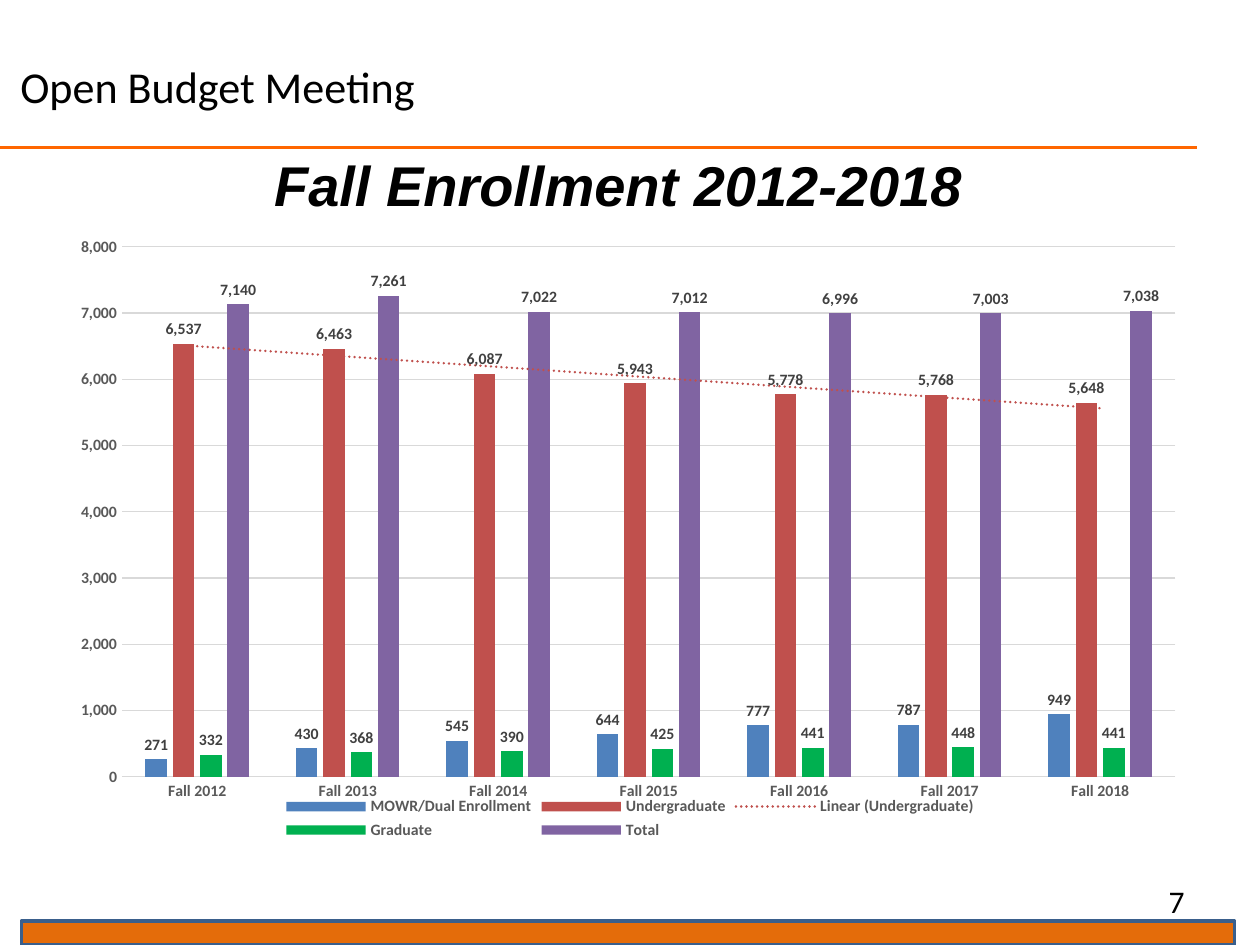
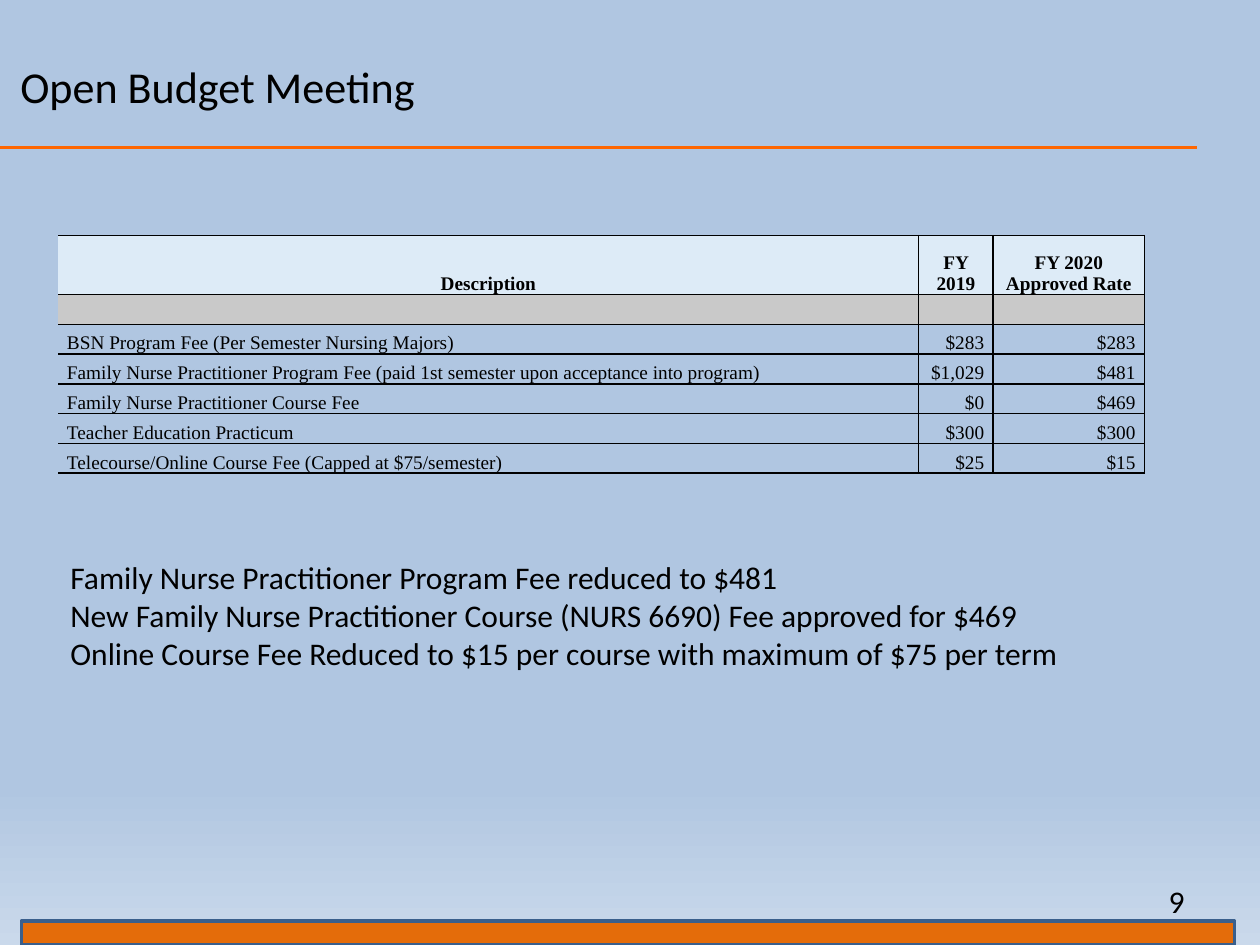
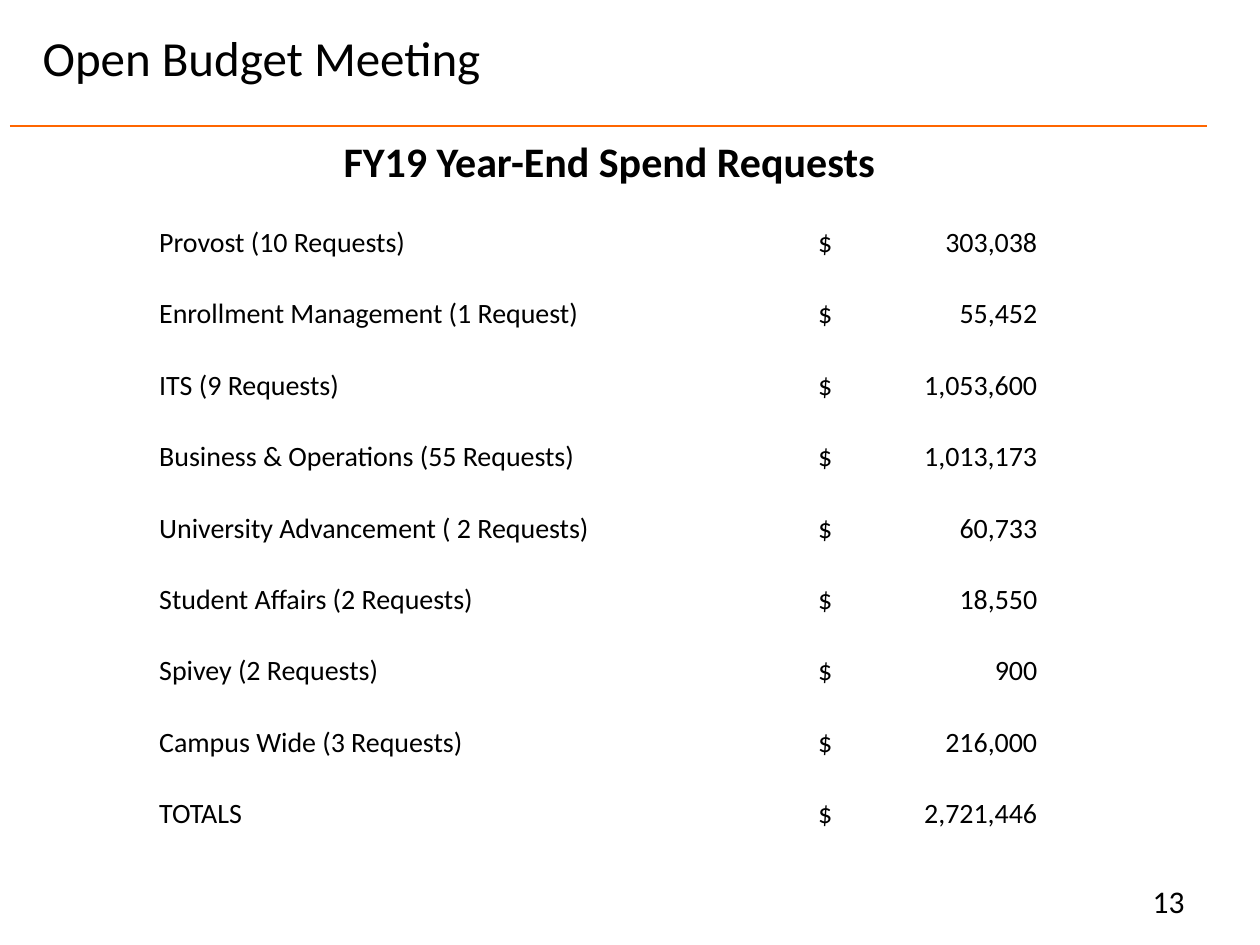
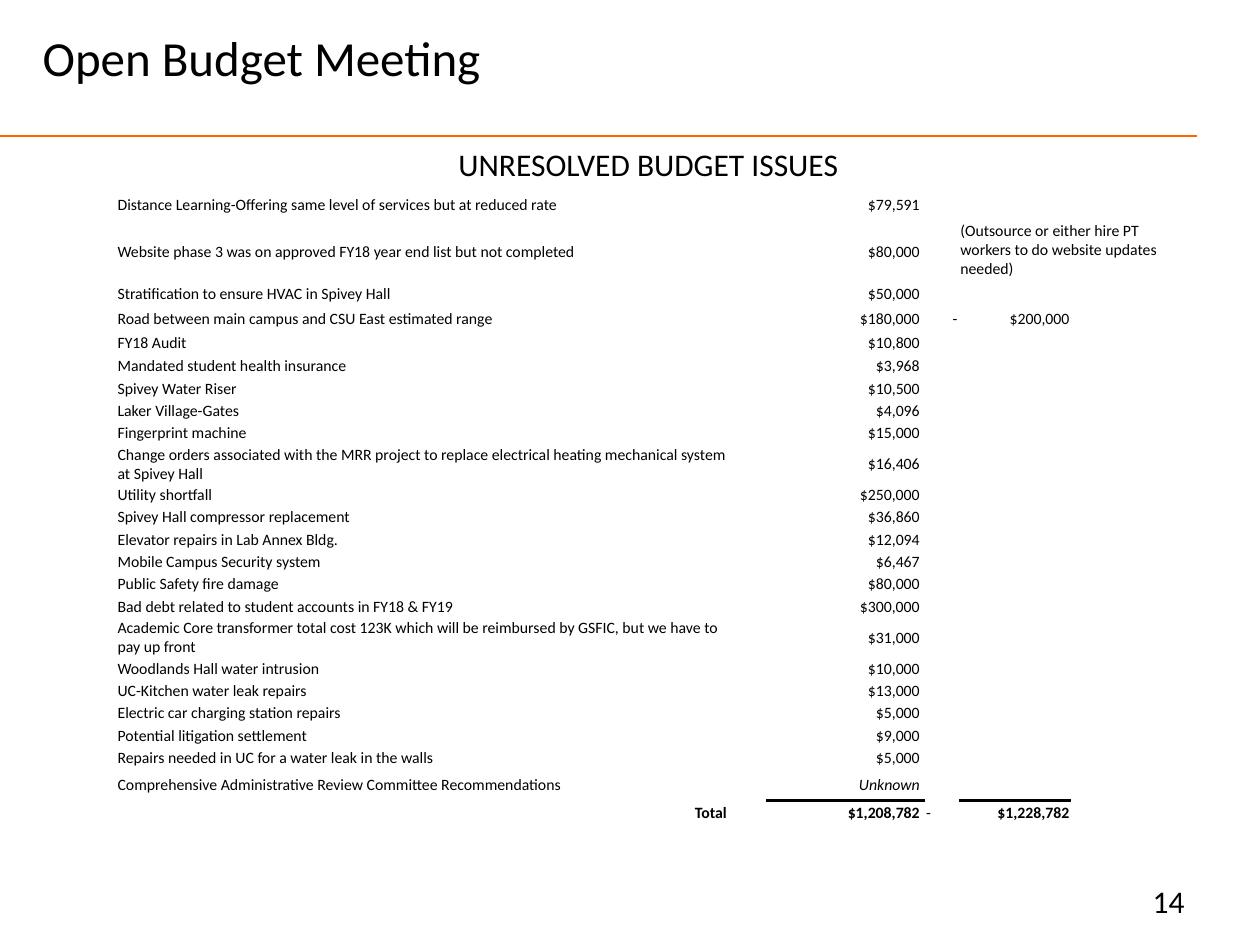
"""Build four slides of an open budget meeting: enrollment, fees, requests and issues."""
from lxml import etree
from pptx import Presentation
from pptx import util as u
from pptx.chart import data
from pptx.dml import color
from pptx.enum import chart as ch, shapes, text
from pptx.oxml import ns

Cm, Pt, Rgb = u.Cm, u.Pt, color.RGBColor.from_string
LEFT, MID, RIGHT = text.PP_ALIGN.LEFT, text.PP_ALIGN.CENTER, text.PP_ALIGN.RIGHT


class Theme:
    ink, rule, bar, edge = "000000", "FF6600", "E46C0A", "3A5F8C"
    sky, haze, head, gap = "B0C6E1", "CAD9EB", "DDEBF7", "C9C9C9"
    axis, label, grid = "595959", "404040", "D9D9D9"
    series = ["4F81BD", "C0504D", "00B050", "8064A2"]
    face, serif, sans = "Calibri", "Times New Roman", "Arial"
    small, fee, row, body, head_pt, banner = 9, 11, 16, 18, 24, 32
    bare = "{2D5ABB26-0587-4C30-8999-92F81FD0307C}"


def write(frame, words, size, face=Theme.face, align=LEFT, bold=False, slant=False):
    frame.text = words
    for para in frame.paragraphs:
        para.alignment = align
        for run in para.runs:
            font = run.font
            font.size, font.name, font.bold, font.italic = Pt(size), face, bold, slant
            font.color.rgb = Rgb(Theme.ink)
        if not para.runs:
            para._p.get_or_add_endParaRPr().set("sz", str(size * 100))


def grid(slide, left, top, cols, rows, cells, aligns, size, face, anchor, pad):
    frame = slide.shapes.add_table(len(rows), len(cols), Cm(left), Cm(top),
                                   Cm(sum(cols)), Cm(sum(rows)))
    frame._element.xpath(".//a:tableStyleId")[0].text = Theme.bare
    table = frame.table
    table.first_row = table.horz_banding = False
    for col, wide in zip(table.columns, cols):
        col.width = Cm(wide)
    for row, tall, line in zip(table.rows, rows, cells):
        row.height = Cm(tall)
        for cell, words, align in zip(row.cells, line, aligns):
            cell.margin_left = cell.margin_right = Cm(pad)
            cell.margin_top, cell.margin_bottom = Cm(0.02), 0
            cell.vertical_anchor = anchor
            cell.fill.background()
            write(cell.text_frame, words, size, face, align)
    return table


deck = Presentation()
deck.slide_width, deck.slide_height = Cm(25.4), Cm(19.05)

early = (1.07, 15.44, 1.27, 0.41, 25.2)
late = (0.43, 13.97, 1.9, 0.86, 28)
pages = [("7", early, 0, 2.97), ("9", early, 0, 2.97),
         ("13", late, 0.2, 2.54), ("14", late, 0, 2.74)]
slides, boxes = [], []
for num, (top, wide, tall, inset, size), start, level in pages:
    slide = deck.slides.add_slide(deck.slide_layouts[5])
    slides.append(slide)
    title = slide.shapes.title
    title.left, title.top, title.width, title.height = Cm(0), Cm(top), Cm(wide), Cm(tall)
    frame = title.text_frame
    frame.auto_size = text.MSO_AUTO_SIZE.NONE
    frame.vertical_anchor = text.MSO_ANCHOR.TOP
    frame.margin_left = Cm(inset)
    write(frame, "Open Budget Meeting", size)
    rule = slide.shapes.add_connector(shapes.MSO_CONNECTOR.STRAIGHT, Cm(start), Cm(level),
                                      Cm(start + 24.13), Cm(level))
    rule.line.color.rgb, rule.line.width = Rgb(Theme.rule), Pt(1.5)
    etree.SubElement(rule._element.spPr, ns.qn("a:effectLst"))
    boxes.append((slide, (18.21, 17.65, 5.92, 1.02), num, Theme.body, Theme.face, RIGHT, False, False))
enroll, fees, spend, issues = slides

for slide in (enroll, fees):
    bar = slide.shapes.add_shape(shapes.MSO_SHAPE.RECTANGLE, Cm(0.43), Cm(18.57), Cm(24.46), Cm(0.48))
    bar.shadow.inherit = False
    bar.fill.solid()
    bar.fill.fore_color.rgb = Rgb(Theme.bar)
    bar.line.color.rgb, bar.line.width = Rgb(Theme.edge), Pt(2)

notes = "\n".join([
    "Family Nurse Practitioner Program Fee reduced to $481",
    "New Family Nurse Practitioner Course (NURS 6690) Fee approved for $469",
    "Online Course Fee Reduced to $15 per course with maximum of $75 per term"])
boxes += [
    (enroll, (1.04, 3.2, 22.86, 1.02), "Fall Enrollment 2012-2018", Theme.banner, Theme.sans, MID, True, True),
    (fees, (1.17, 11.13, 22.43, 2.57), notes, Theme.body, Theme.face, LEFT, False, False),
    (issues, (6.15, 2.79, 11, 1.02), "UNRESOLVED BUDGET ISSUES", Theme.body, Theme.face, RIGHT, False, False)]
for slide, place, words, size, face, align, bold, slant in boxes:
    frame = slide.shapes.add_textbox(*map(Cm, place)).text_frame
    frame.word_wrap = True
    if size == Theme.banner:
        frame.vertical_anchor = text.MSO_ANCHOR.MIDDLE
    write(frame, words, size, face, align, bold, slant)

counts = data.CategoryChartData(number_format="#,##0")
counts.categories = [f"Fall {year}" for year in range(2012, 2019)]
counts.add_series("MOWR/Dual Enrollment", (271, 430, 545, 644, 777, 787, 949))
counts.add_series("Undergraduate", (6537, 6463, 6087, 5943, 5778, 5768, 5648))
counts.add_series("Graduate", (332, 368, 390, 425, 441, 448, 441))
counts.add_series("Total", (7140, 7261, 7022, 7012, 6996, 7003, 7038))
chart = enroll.shapes.add_chart(ch.XL_CHART_TYPE.COLUMN_CLUSTERED, Cm(1.27), Cm(4.45),
                                Cm(22.86), Cm(12.57), counts).chart
chart.has_title = False
chart.has_legend = True
chart.legend.position = ch.XL_LEGEND_POSITION.BOTTOM
chart.legend.include_in_layout = False
plot = chart.plots[0]
plot.gap_width, plot.overlap, plot.vary_by_categories = 219, -27, False
across, up = chart.category_axis, chart.value_axis
up.minimum_scale, up.maximum_scale, up.major_unit = 0, 8000, 1000
up.tick_labels.number_format, up.tick_labels.number_format_is_linked = "#,##0", False
up.format.line.fill.background()
for axis in (across, up):
    axis.major_tick_mark = axis.minor_tick_mark = ch.XL_TICK_MARK.NONE
for line in (across.format.line, up.major_gridlines.format.line):
    line.color.rgb, line.width = Rgb(Theme.grid), Pt(0.75)
fonts = [(part.font, Theme.axis) for part in (chart, chart.legend, across.tick_labels, up.tick_labels)]
for series, tone in zip(plot.series, Theme.series):
    series.format.fill.solid()
    series.format.fill.fore_color.rgb = Rgb(tone)
    series.invert_if_negative = False
    tags = series.data_labels
    tags.show_value, tags.position = True, ch.XL_LABEL_POSITION.OUTSIDE_END
    tags.number_format, tags.number_format_is_linked = "#,##0", False
    fonts.append((tags.font, Theme.label))
for font, tone in fonts:
    font.size, font.name, font.bold, font.color.rgb = Pt(Theme.small), Theme.face, True, Rgb(tone)

spaces = f'xmlns:c="{ns.nsuri("c")}" xmlns:a="{ns.nsuri("a")}"'
trend = etree.fromstring(
    f'<c:trendline {spaces}><c:spPr><a:ln w="19050" cap="rnd"><a:solidFill>'
    f'<a:srgbClr val="{Theme.series[1]}"/></a:solidFill><a:prstDash val="sysDot"/></a:ln></c:spPr>'
    '<c:trendlineType val="linear"/><c:dispRSqr val="0"/><c:dispEq val="0"/></c:trendline>')
plot.series[1]._element.find(ns.qn("c:cat")).addprevious(trend)
area = chart._chartSpace.find(".//" + ns.qn("c:plotArea"))
for old in area.findall(ns.qn("c:layout")):
    area.remove(old)
sides = "".join(f'<c:{key} val="{val}"/>' for key, val in [
    ("layoutTarget", "inner"), ("xMode", "edge"), ("yMode", "edge"),
    ("x", 0.052), ("y", 0.042), ("w", 0.929), ("h", 0.85)])
area.insert(0, etree.fromstring(
    f'<c:layout {spaces}><c:manualLayout>{sides}</c:manualLayout></c:layout>'))

back = fees.background.fill
back.gradient()
back.gradient_angle = 270
for stop, spot, tone in zip(back.gradient_stops, (0.83, 1), (Theme.sky, Theme.haze)):
    stop.position, stop.color.rgb = spot, Rgb(tone)

rates = [
    ("Description", "FY 2019", "FY 2020\nApproved Rate"),
    ("", "", ""),
    ("BSN Program Fee (Per Semester Nursing Majors)", "$283", "$283"),
    ("Family Nurse Practitioner Program Fee (paid 1st semester upon acceptance into program)", "$1,029", "$481"),
    ("Family Nurse Practitioner Course Fee", "$0", "$469"),
    ("Teacher Education Practicum", "$300", "$300"),
    ("Telecourse/Online Course Fee (Capped at $75/semester)", "$25", "$15")]
table = grid(fees, 1.17, 4.75, [17.35, 1.5, 3.05], [1.19] + [0.6] * 6, rates, [LEFT, RIGHT, RIGHT],
             Theme.fee, Theme.serif, text.MSO_ANCHOR.BOTTOM, 0.18)
for row, tone in enumerate((Theme.head, Theme.gap)):
    for cell in table.rows[row].cells:
        cell.fill.solid()
        cell.fill.fore_color.rgb = Rgb(tone)
for cell, words in zip(table.rows[0].cells, rates[0]):
    write(cell.text_frame, words, Theme.fee, Theme.serif, MID, True)
edges = [(cell, "RTB", 1) for cell in table.iter_cells()]

asks = [
    ("Provost (10 Requests)", "303,038"),
    ("Enrollment Management (1 Request)", "55,452"),
    ("ITS (9 Requests)", "1,053,600"),
    ("Business & Operations (55 Requests)", "1,013,173"),
    ("University Advancement ( 2 Requests)", "60,733"),
    ("Student Affairs (2 Requests)", "18,550"),
    ("Spivey (2 Requests)", "900"),
    ("Campus Wide (3 Requests)", "216,000"),
    ("TOTALS", "2,721,446")]
lines = [("", "")]
for name, sum_ in asks:
    lines += [("", ""), (name, f"$\t{sum_}")]
table = grid(spend, 3.18, 2.74, [13.18, 5.03], [1.06] + [0.71, 0.73] * 9, lines, [LEFT, LEFT],
             Theme.row, Theme.face, text.MSO_ANCHOR.BOTTOM, 0.03)
for row in range(2, len(lines), 2):
    cell = table.cell(row, 1)
    cell.margin_left = Cm(0.13)
    tabs = etree.SubElement(cell.text_frame.paragraphs[0]._p.get_or_add_pPr(), ns.qn("a:tabLst"))
    etree.SubElement(tabs, ns.qn("a:tab"), pos=str(Cm(4.42)), algn="r")
table.cell(0, 0).merge(table.cell(0, 1))
write(table.cell(0, 0).text_frame, "FY19 Year-End Spend Requests", Theme.head_pt, align=MID, bold=True)

needs = [
    ("Distance Learning-Offering same level of services but at reduced rate", "$79,591"),
    ("Website phase 3 was on approved FY18 year end list but not completed", "$80,000"),
    ("Stratification to ensure HVAC in Spivey Hall", "$50,000"),
    ("Road between main campus and CSU East estimated range", "$180,000"),
    ("FY18 Audit", "$10,800"),
    ("Mandated student health insurance", "$3,968"),
    ("Spivey Water Riser", "$10,500"),
    ("Laker Village-Gates", "$4,096"),
    ("Fingerprint machine", "$15,000"),
    ("Change orders associated with the MRR project to replace electrical heating mechanical system "
     "at Spivey Hall", "$16,406"),
    ("Utility shortfall", "$250,000"),
    ("Spivey Hall compressor replacement", "$36,860"),
    ("Elevator repairs in Lab Annex Bldg.", "$12,094"),
    ("Mobile Campus Security system", "$6,467"),
    ("Public Safety fire damage", "$80,000"),
    ("Bad debt related to student accounts in FY18 & FY19", "$300,000"),
    ("Academic Core transformer total cost 123K which will be reimbursed by GSFIC, but we have to "
     "pay up front", "$31,000"),
    ("Woodlands Hall water intrusion", "$10,000"),
    ("UC-Kitchen water leak repairs", "$13,000"),
    ("Electric car charging station repairs", "$5,000"),
    ("Potential litigation settlement", "$9,000"),
    ("Repairs needed in UC for a water leak in the walls", "$5,000"),
    ("Comprehensive Administrative Review Committee Recommendations", "Unknown"),
    ("Total", "$1,208,782")]
last = len(needs) - 1
extra = {1: ("", "(Outsource or either hire PT workers to do website updates needed)"),
         3: ("-", "$200,000"), last: ("-", "$1,228,782")}
lines = [(name, "", cost, *extra.get(row, ("", "")), "", "") for row, (name, cost) in enumerate(needs)]
tall = {0: 0.64, 1: 1.23, 2: 0.49, 3: 0.49, 4: 0.49, 9: 0.8, 16: 0.8, last - 1: 0.64}
table = grid(issues, 2.34, 3.81, [12.34, 0.76, 3.2, 0.69, 2.26, 1.22, 0.71],
             [tall.get(row, 0.45) for row in range(len(needs))], lines,
             [LEFT, LEFT, RIGHT, RIGHT, RIGHT, LEFT, LEFT],
             Theme.small, Theme.face, text.MSO_ANCHOR.MIDDLE, 0.03)
for row in range(len(needs)):
    table.cell(row, 2).margin_right = Cm(0.1)
remark = table.cell(1, 4)
remark.merge(table.cell(1, 6))
remark.vertical_anchor = text.MSO_ANCHOR.TOP
remark.text_frame.paragraphs[0].alignment = LEFT
table.cell(last - 1, 2).text_frame.paragraphs[0].runs[0].font.italic = True
for cell in table.rows[last].cells:
    cell.vertical_anchor = text.MSO_ANCHOR.BOTTOM
table.cell(last, 3).text_frame.paragraphs[0].alignment = LEFT
table.cell(last, 0).text_frame.paragraphs[0].alignment = RIGHT
for col in (0, 2, 4):
    table.cell(last, col).text_frame.paragraphs[0].runs[0].font.bold = True
for col in (2, 4):
    edges += [(table.cell(last - 1, col), "B", 2), (table.cell(last, col), "T", 2)]

for cell, sides, width in edges:
    props = cell._tc.get_or_add_tcPr()
    for side in reversed(sides):
        line = etree.Element(ns.qn(f"a:ln{side}"), w=str(Pt(width)))
        fill = etree.SubElement(line, ns.qn("a:solidFill"))
        etree.SubElement(fill, ns.qn("a:srgbClr"), val=Theme.ink)
        props.insert(0, line)

deck.save("out.pptx")
